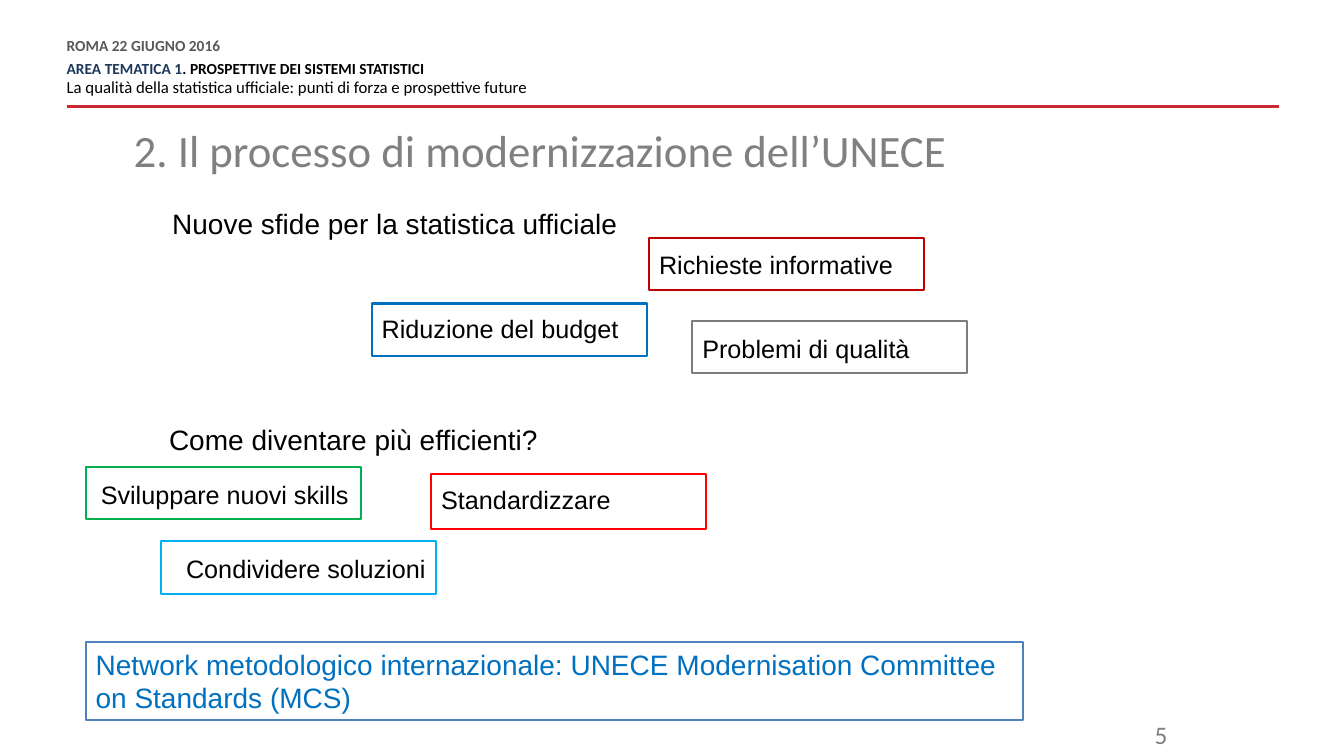
from pptx import Presentation
from pptx.dml.color import RGBColor as RGB
from pptx.enum.shapes import MSO_CONNECTOR as CONN, MSO_SHAPE as SHAPE
from pptx.enum.text import MSO_ANCHOR as ANCHOR, PP_ALIGN as ALIGN
from pptx.oxml.ns import qn
from pptx.util import Cm, Pt
from lxml.etree import SubElement

COLORS = {
    "black": "000000", "navy": "1C385A", "dark": "595959", "number": "7F7F7F",
    "title": "808080", "rule": "C72A31", "crimson": "C00000", "blue": "0070C0",
    "gray": "7C7C7C", "green": "00B050", "red": "FF0000", "sky": "00B0F0",
    "steel": "4F81BD", "white": "FFFFFF",
}


class Deck:
    """Draws styled elements on the current slide."""

    def __init__(self, width, height):
        self.prs = Presentation()
        self.prs.slide_width, self.prs.slide_height = Cm(width), Cm(height)
        self.s = self.prs.slides.add_slide(self.prs.slide_layouts[6])

    def color(self, name):
        return RGB.from_string(COLORS[name])

    def paragraph(self, p, runs, fmt=None):
        for key, value in (fmt or {}).items():
            setattr(p, key, value)
        for text, color, font in runs:
            r = p.add_run()
            r.text = text
            r.font.color.rgb = self.color(color)
            for key, value in font.items():
                setattr(r.font, key, value)

    def text(self, box, paragraphs, margin=None):
        sp = self.s.shapes.add_textbox(*map(Cm, box))
        tf = sp.text_frame
        tf.word_wrap = True
        if margin is not None:
            for side in ("left", "top", "right", "bottom"):
                setattr(tf, f"margin_{side}", Cm(margin))
        for i, (runs, fmt) in enumerate(paragraphs):
            self.paragraph(tf.add_paragraph() if i else tf.paragraphs[0], runs, fmt)

    def label(self, box, text, color, font, fmt=None):
        self.text(box, [([(text, color, font)], fmt)])

    def frame(self, box, line, fill=None):
        sp = self.s.shapes.add_shape(SHAPE.RECTANGLE, *map(Cm, box))
        sp.shadow.inherit = False
        if fill:
            sp.fill.solid()
            sp.fill.fore_color.rgb = self.color(fill)
        else:
            sp.fill.background()
        sp.line.color.rgb = self.color(line)
        sp.line.width = Pt(1.5)
        return sp

    def panel(self, box, text, line, fill, color, font):
        tf = self.frame(box, line, fill).text_frame
        tf.word_wrap = True
        tf.vertical_anchor = ANCHOR.TOP
        self.paragraph(tf.paragraphs[0], [(text, color, font)], {"alignment": ALIGN.LEFT})

    def rule(self, x1, x2, y, color, width):
        c = self.s.shapes.add_connector(CONN.STRAIGHT, Cm(x1), Cm(y), Cm(x2), Cm(y))
        c.line.color.rgb = self.color(color)
        c.line.width = Pt(width)
        SubElement(c._element.spPr, qn("a:effectLst"))


def main():
    deck = Deck(33.87, 19.05)
    bold = {"name": "Calibri", "size": Pt(11), "bold": True}
    plain = {"name": "Calibri", "size": Pt(12)}
    heading = {"name": "Arial", "size": Pt(20)}
    body = {"name": "Arial", "size": Pt(18)}
    tight = {"line_spacing": Pt(10.8)}

    deck.rule(1.68, 32.23, 2.69, "rule", 2)
    deck.text((1.68, 0.99, 21.18, 1.5), [
        ([("ROMA 22 GIUGNO 2016", "dark", bold)], tight | {"space_after": Pt(6)}),
        ([("AREA TEMATICA 1", "navy", bold),
          (". PROSPETTIVE DEI SISTEMI STATISTICI", "black", bold)], tight),
        ([("La qualità della statistica ufficiale: punti di forza e prospettive future",
           "black", plain)], tight | {"space_before": Pt(3), "space_after": Pt(6)}),
    ], margin=0)
    deck.label((27.66, 18.01, 2.01, 0.89), "5", "number",
               {"name": "Calibri", "size": Pt(18)}, {"alignment": ALIGN.RIGHT})
    deck.label((3.12, 3.12, 26.52, 1.93), "2. Il processo di modernizzazione dell’UNECE",
               "title", {"name": "Calibri", "size": Pt(32)}, {"line_spacing": 0.9})
    deck.label((4.09, 5.08, 23.11, 2.18), "Nuove sfide per la statistica ufficiale",
               "black", heading)
    deck.label((4.01, 10.52, 20.98, 1.12), "Come diventare più efficienti?",
               "black", heading)

    topics = [
        ("Richieste informative", "crimson", 16.36, 5.99, 1.32, 0, 0.18),
        ("Riduzione del budget", "blue", 9.37, 7.65, 1.32, 0, 0.13),
        ("Problemi di qualità", "gray", 17.45, 8.08, 1.32, 0, 0.2),
        ("Sviluppare nuovi skills", "green", 2.16, 11.76, 1.32, 0.13, 0.2),
        ("Standardizzare", "red", 10.87, 11.94, 1.4, 0, 0.15),
        ("Condividere soluzioni", "sky", 4.06, 13.64, 1.32, 0.38, 0.18),
    ]
    for text, line, x, y, height, dx, dy in topics:
        deck.frame((x, y, 6.93, height), line)
        deck.label((x + dx, y + dy, 6.93, 1.02), text, "black", body)

    deck.panel((2.16, 16.18, 23.62, 1.96),
               "Network metodologico internazionale: UNECE Modernisation Committee "
               "on Standards (MCS)", "steel", "white", "blue", heading)
    deck.prs.save("out.pptx")


if __name__ == "__main__":
    main()
